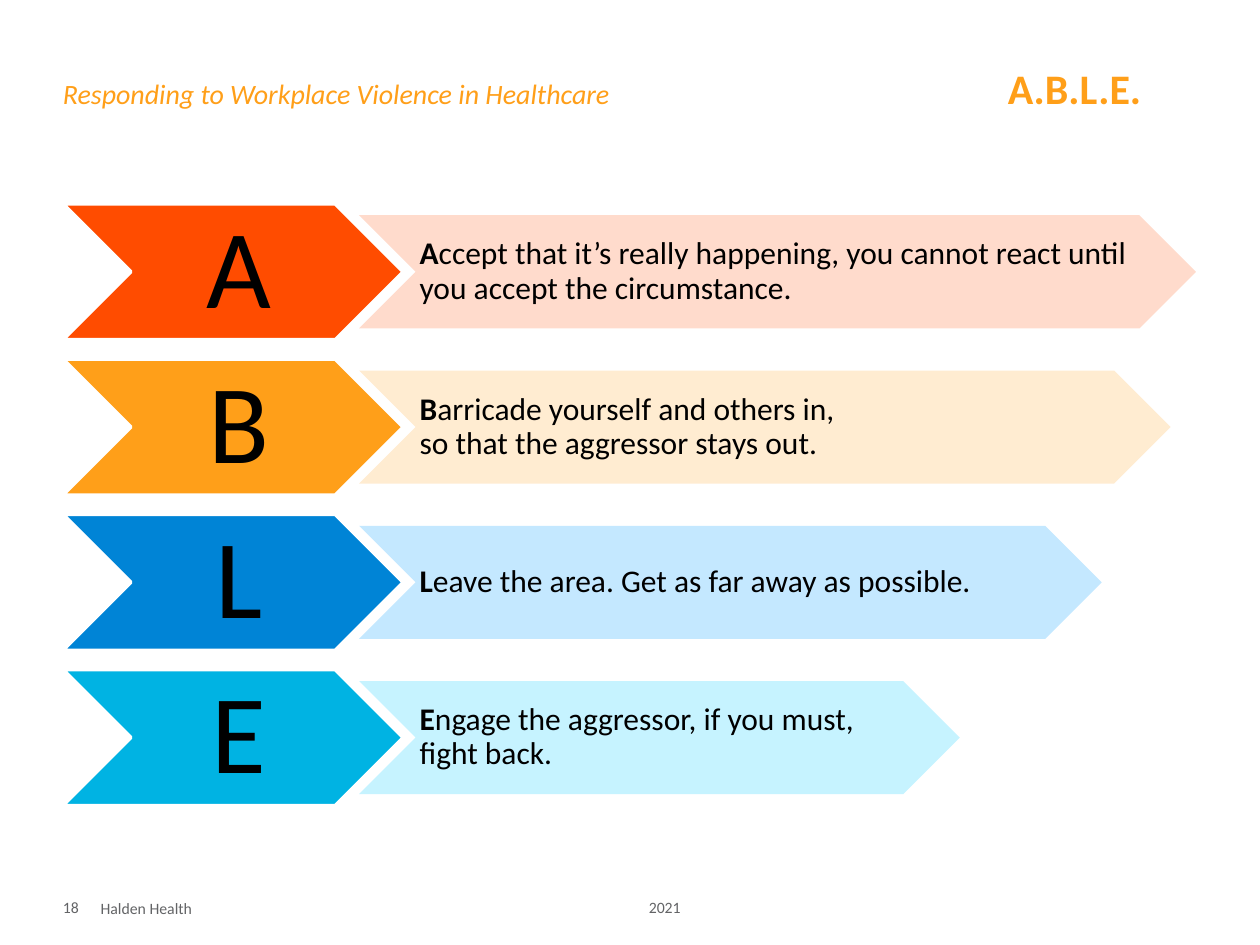
from lxml import etree
from pptx import Presentation
from pptx.dml.color import RGBColor
from pptx.enum.shapes import MSO_SHAPE as Shape
from pptx.enum.text import MSO_ANCHOR as Anchor, PP_ALIGN as Align
from pptx.oxml.ns import qn
from pptx.util import Cm, Pt

ORANGE = RGBColor(0xFF, 0x9F, 0x19)
RED = RGBColor(0xFF, 0x4C, 0x00)
BLUE = RGBColor(0x00, 0x84, 0xD6)
CYAN = RGBColor(0x00, 0xB3, 0xE3)
PALE_RED = RGBColor(0xFF, 0xDB, 0xCC)
PALE_ORANGE = RGBColor(0xFF, 0xEC, 0xD1)
PALE_BLUE = RGBColor(0xC4, 0xE8, 0xFF)
PALE_CYAN = RGBColor(0xC6, 0xF3, 0xFF)
BLACK = RGBColor(0x00, 0x00, 0x00)
WHITE = RGBColor(0xFF, 0xFF, 0xFF)
GREY = RGBColor(0x63, 0x64, 0x66)

deck = Presentation()
deck.slide_width, deck.slide_height = Cm(25.4), Cm(19.05)
page = deck.slides.add_slide(deck.slide_layouts[6])


def add_text(place, runs, color, anchor=Anchor.MIDDLE, margins=(0, 0, 0, 0)):
    """Add a one-paragraph box; runs are (text, size, bold, italic), place and margins in cm."""
    box = page.shapes.add_textbox(*(Cm(length) for length in place))
    frame = box.text_frame
    frame.word_wrap = True
    frame.vertical_anchor = anchor
    (frame.margin_left, frame.margin_top,
     frame.margin_right, frame.margin_bottom) = (Cm(margin) for margin in margins)
    para = frame.paragraphs[0]
    for text, size, bold, italic in runs:
        for index, line in enumerate(text.split("\n")):
            if index:
                para.add_line_break()
            span = para.add_run()
            span.text = line
            span.font.name = "Calibri"
            span.font.size = Pt(size)
            span.font.bold = bold
            span.font.italic = italic
            span.font.color.rgb = color
    return para


def add_chevron(left, top, width, height, color):
    chevron = page.shapes.add_shape(Shape.CHEVRON, Cm(left), Cm(top), Cm(width), Cm(height))
    chevron.shadow.inherit = False
    chevron.fill.solid()
    chevron.fill.fore_color.rgb = color
    return chevron


# Title, with the acronym at a tab stop
title = add_text((1.27, 1.27, 22.86, 2.13),
                 [("Responding to Workplace Violence in Healthcare\t", 16, False, True),
                  ("A.B.L.E.", 24, True, False)],
                 ORANGE, Anchor.TOP)
tabs = etree.SubElement(title._p.get_or_add_pPr(), qn("a:tabLst"))
etree.SubElement(tabs, qn("a:tab"), pos=str(Cm(19.05)), algn="l")

# One row per step: letter chevron and description chevron
STEPS = [
    ("A", "ccept that it’s really happening, you cannot react until you accept the circumstance.",
     RED, PALE_RED, 16.87),
    ("B", "arricade yourself and others in,\nso that the aggressor stays out.",
     ORANGE, PALE_ORANGE, 16.36),
    ("L", "eave the area. Get as far away as possible.", BLUE, PALE_BLUE, 14.97),
    ("E", "ngage the aggressor, if you must, fight back.", CYAN, PALE_CYAN, 12.11),
]
FIRST_TOP, ROW_PITCH = 4.11, 3.13
LETTER_HEIGHT, BAR_HEIGHT = 2.74, 2.28
BAR_OFFSET = (LETTER_HEIGHT - BAR_HEIGHT) / 2

for row, (letter, rest, strong, pale, bar_width) in enumerate(STEPS):
    top = FIRST_TOP + row * ROW_PITCH
    bar_top = top + BAR_OFFSET

    letter_chevron = add_chevron(1.27, top, 6.86, LETTER_HEIGHT, strong)
    letter_chevron.line.color.rgb = WHITE
    letter_chevron.line.width = Pt(2)
    para = add_text((2.64, top, 4.11, LETTER_HEIGHT), [(letter, 64, False, False)],
                    BLACK, margins=(0.23, 0.1, 0, 0.1))
    para.alignment = Align.CENTER
    para.line_spacing = 0.9

    bar = add_chevron(7.24, bar_top, bar_width, BAR_HEIGHT, pale)
    bar.line.fill.background()
    para = add_text((8.38, bar_top, bar_width - BAR_HEIGHT, BAR_HEIGHT),
                    [(letter, 18, True, False), (rest, 18, False, False)],
                    BLACK, margins=(0.08, 0.03, 0, 0.03))
    para.line_spacing = 0.9

# Footer
add_text((2.03, 17.98, 10.16, 0.51), [("Halden Health", 9, False, False)], GREY,
         margins=(0, 0.13, 0, 0))
add_text((1.27, 17.7, 1.27, 0.79), [("18", 9, False, False)], GREY, Anchor.BOTTOM)
add_text((13.08, 17.98, 4.06, 0.51), [("2021", 9, False, False)], GREY, Anchor.BOTTOM)

deck.save("out.pptx")
